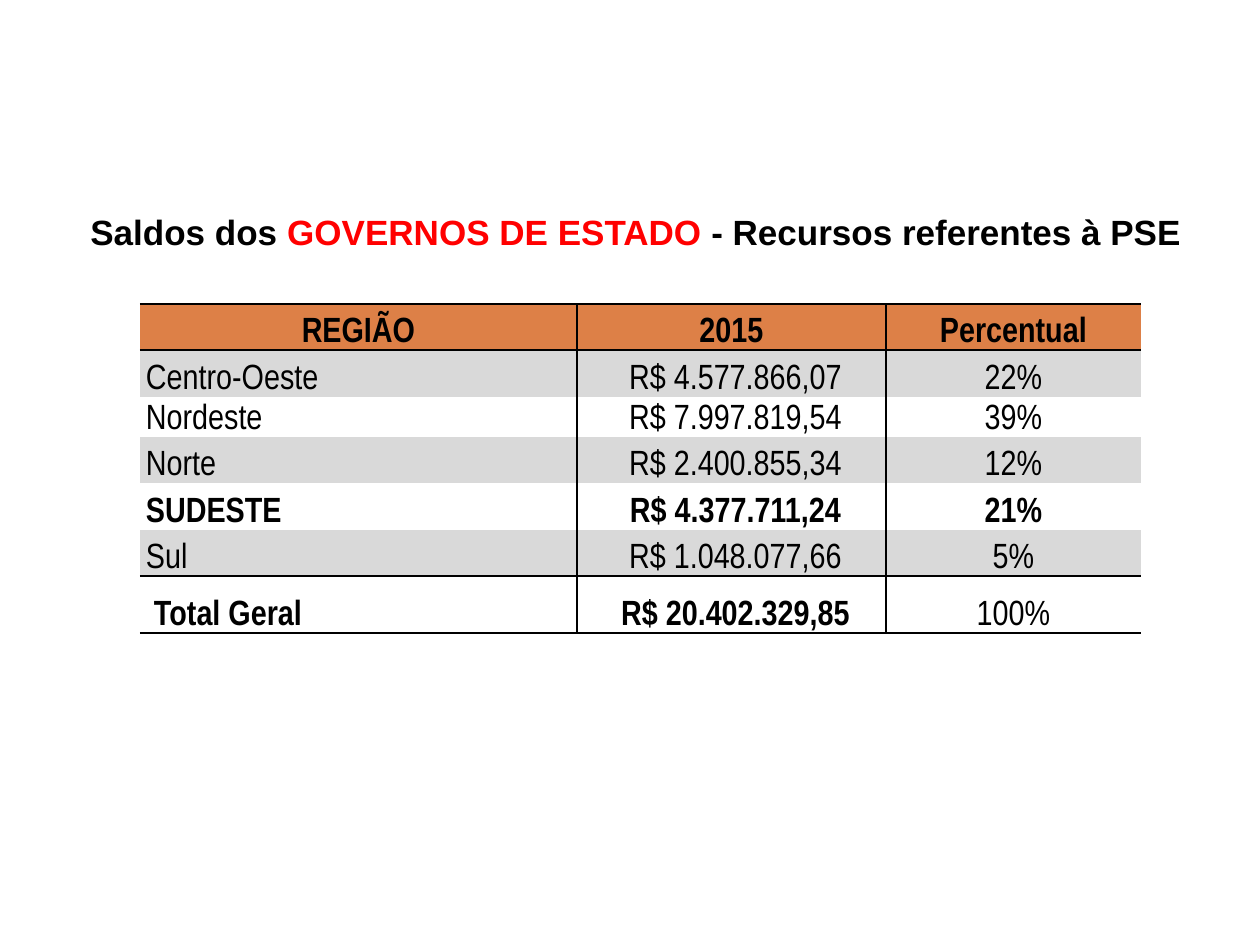
"""Build a slide with the state government balances by region."""
from dataclasses import dataclass

from lxml.etree import SubElement
from pptx import Presentation
from pptx.dml.color import RGBColor as RGB
from pptx.enum.text import MSO_ANCHOR as Anchor, PP_ALIGN as Align
from pptx.oxml.ns import qn
from pptx.util import Pt

PX = 914400 // 126


@dataclass(frozen=True)
class Theme:
    ink: str = "000000"
    red: str = "FF0000"
    head: str = "DD8047"
    band: str = "D9D9D9"
    size: int = 20
    title: str = "Arial"
    body: str = "Arial Narrow"


THEME = Theme()
TITLE = [
    ("Saldos dos ", THEME.ink),
    ("GOVERNOS DE ESTADO ", THEME.red),
    ("- Recursos referentes à PSE", THEME.ink),
]
ROWS = [
    ("REGIÃO", "2015", "Percentual"),
    ("Centro-Oeste", " R$ 4.577.866,07", "22%"),
    ("Nordeste", " R$ 7.997.819,54", "39%"),
    ("Norte", " R$ 2.400.855,34", "12%"),
    ("SUDESTE", " R$ 4.377.711,24", "21%"),
    ("Sul", " R$ 1.048.077,66", "5%"),
    (" Total Geral", " R$ 20.402.329,85", "100%"),
]
WIDTHS = [437, 309, 255]
HEIGHTS = [46, 47, 40, 46, 47, 46, 57]
LAST = len(ROWS) - 1
RULES = {0, 1, LAST, LAST + 1}
BOLD = {(r, c) for r in (0, 4, LAST) for c in range(3)} - {(LAST, 2)}


def style(run, face, color, bold):
    font = run.font
    font.name, font.size, font.bold = face, Pt(THEME.size), bold
    font.color.rgb = RGB.from_string(color)


def border(cell, sides):
    props = cell._tc.get_or_add_tcPr()
    for spot, (side, shown) in enumerate(sides.items()):
        line = SubElement(props, qn(f"a:ln{side}"), w=str(Pt(1)))
        props.insert(spot, line)
        if shown:
            fill = SubElement(line, qn("a:solidFill"))
            SubElement(fill, qn("a:srgbClr"), val=THEME.ink)
        else:
            SubElement(line, qn("a:noFill"))


def fill_cell(cell, row, col, text):
    cell.text = text
    cell.vertical_anchor = Anchor.BOTTOM
    tight = col == 2 and 0 < row < LAST
    cell.margin_left = cell.margin_right = (1 if tight else 6) * PX
    cell.margin_top = (1 if tight else 0) * PX
    cell.margin_bottom = 0
    para = cell.text_frame.paragraphs[0]
    para.alignment = Align.CENTER if row == 0 or col else Align.LEFT
    para.line_spacing = 1.15
    style(para.runs[0], THEME.body, THEME.ink, (row, col) in BOLD)
    if row == 0 or row % 2:
        cell.fill.solid()
        color = THEME.band if row else THEME.head
        cell.fill.fore_color.rgb = RGB.from_string(color)
    else:
        cell.fill.background()
    border(cell, {"L": col > 0, "R": col < 2,
                  "T": row in RULES, "B": row + 1 in RULES})


def add_grid(slide):
    frame = slide.shapes.add_table(
        len(ROWS), len(WIDTHS), 140 * PX, 304 * PX,
        sum(WIDTHS) * PX, sum(HEIGHTS) * PX)
    grid = frame.table
    grid.first_row = grid.horz_banding = False
    for col, width in zip(grid.columns, WIDTHS):
        col.width = width * PX
    for row, height in zip(grid.rows, HEIGHTS):
        row.height = height * PX
    for r, texts in enumerate(ROWS):
        for c, text in enumerate(texts):
            fill_cell(grid.cell(r, c), r, c, text)


def add_title(slide):
    box = slide.shapes.add_textbox(78 * PX, 204 * PX, 1125 * PX, 55 * PX)
    box.text_frame.word_wrap = False
    para = box.text_frame.paragraphs[0]
    for text, color in TITLE:
        run = para.add_run()
        run.text = text
        style(run, THEME.title, color, True)


def main():
    deck = Presentation()
    deck.slide_width, deck.slide_height = 1260 * PX, 945 * PX
    slide = deck.slides.add_slide(deck.slide_layouts[6])
    add_grid(slide)
    add_title(slide)
    deck.save("out.pptx")


if __name__ == "__main__":
    main()
